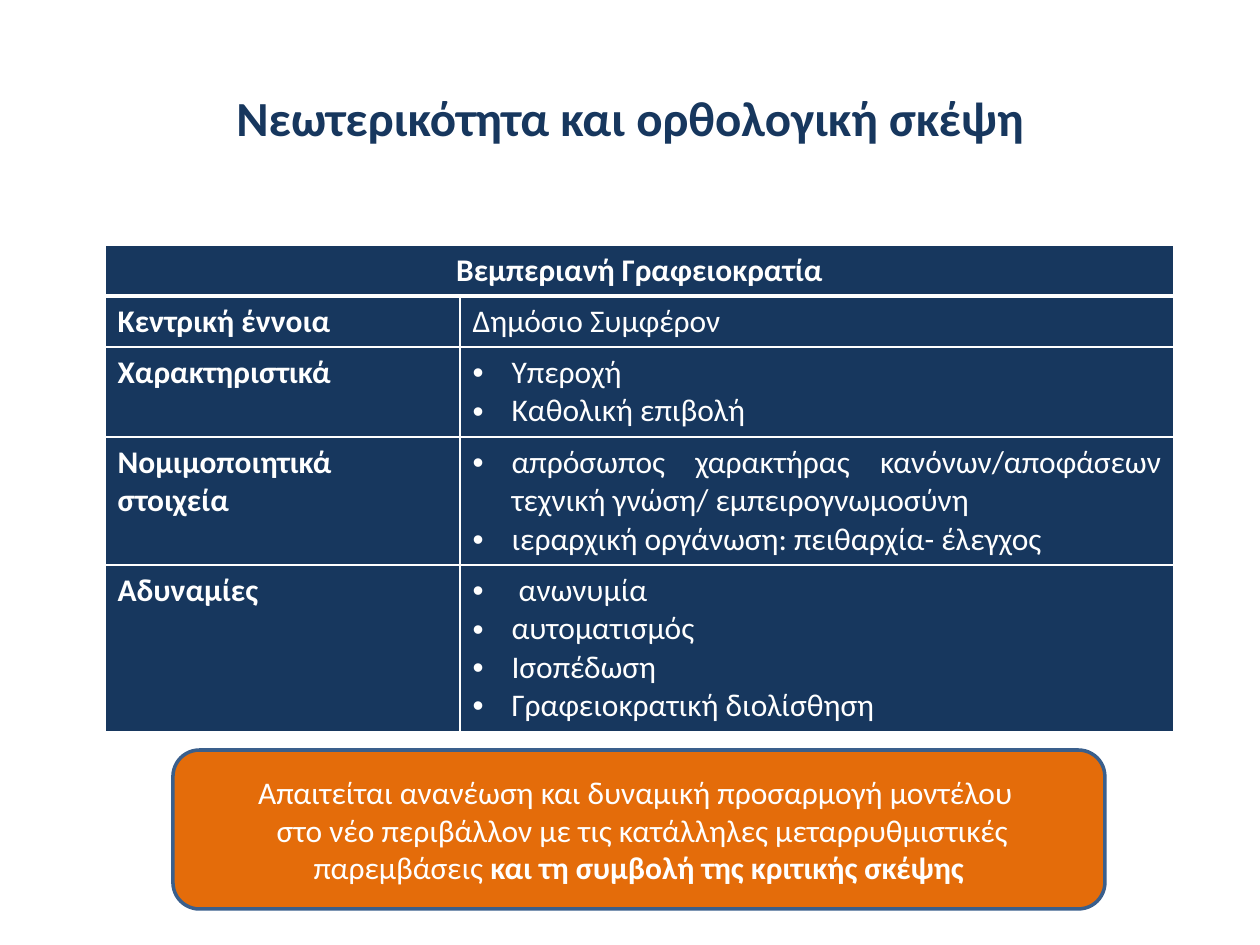
import pptx
import pptx.util
import pptx.dml.color
import pptx.enum.shapes
import pptx.enum.text
import pptx.oxml.ns
from lxml import etree

PX = 914400 // 126
NAVY, ORANGE, OUTLINE, WHITE = "17375E", "E46C0A", "3A5F8C", "FFFFFF"
ALIGN = pptx.enum.text.PP_ALIGN
MIDDLE = pptx.enum.text.MSO_ANCHOR.MIDDLE

TITLE = "Νεωτερικότητα και ορθολογική σκέψη"
HEADER = "Βεμπεριανή Γραφειοκρατία"
ROWS = [
    ("Κεντρική έννοια", ["Δημόσιο Συμφέρον"], False, ALIGN.LEFT),
    ("Χαρακτηριστικά", ["Υπεροχή", "Καθολική επιβολή"], True, ALIGN.LEFT),
    ("Νομιμοποιητικά στοιχεία", [
        "απρόσωπος χαρακτήρας κανόνων/αποφάσεων τεχνική γνώση/ εμπειρογνωμοσύνη",
        "ιεραρχική οργάνωση: πειθαρχία- έλεγχος",
    ], True, ALIGN.JUSTIFY),
    ("Αδυναμίες", [
        " ανωνυμία", "αυτοματισμός", "Ισοπέδωση", "Γραφειοκρατική διολίσθηση",
    ], True, ALIGN.JUSTIFY),
]
CONCLUSION = [
    [("Απαιτείται ανανέωση και δυναμική προσαρμογή μοντέλου ", False)],
    [(" στο νέο περιβάλλον με τις κατάλληλες μεταρρυθμιστικές παρεμβάσεις ", False),
     ("και τη συμβολή της κριτικής σκέψης", True)],
]
TITLE_BOX = (63, 38, 1134, 157)
TABLE_BOX = (105, 245, 1069, 486)
CONCLUSION_BOX = (173, 750, 932, 159)
COLUMNS = [355, 714]
HEIGHTS = [51, 51, 90, 128, 166]


def px(*values):
    return [v * PX for v in values]


def rgb(color):
    return pptx.dml.color.RGBColor.from_string(color)


def fill(obj, color):
    obj.fill.solid()
    obj.fill.fore_color.rgb = rgb(color)


def write(tf, paragraphs, size=18, color=WHITE, align=ALIGN.LEFT, bullet=False):
    for i, runs in enumerate(paragraphs):
        p = tf.paragraphs[0] if i == 0 else tf.add_paragraph()
        p.alignment = align
        if bullet:
            add_bullet(p)
        for text, bold in runs:
            r = p.add_run()
            r.text = text
            r.font.name = "Calibri"
            r.font.size = pptx.util.Pt(size)
            r.font.bold = bold
            r.font.color.rgb = rgb(color)


def add_bullet(p):
    pPr = p._p.get_or_add_pPr()
    indent = 39 * PX
    pPr.set("marL", str(indent))
    pPr.set("indent", str(-indent))
    qn = pptx.oxml.ns.qn
    etree.SubElement(pPr, qn("a:buFont"), typeface="Arial")
    etree.SubElement(pPr, qn("a:buChar"), char="•")


def set_borders(cell, row):
    qn = pptx.oxml.ns.qn
    tcPr = cell._tc.get_or_add_tcPr()
    widths = {"L": 1, "R": 1, "T": 3 if row == 1 else 1, "B": 3 if row == 0 else 1}
    for side, width in widths.items():
        ln = etree.SubElement(tcPr, qn("a:ln" + side), w=str(pptx.util.Pt(width)))
        solid = etree.SubElement(ln, qn("a:solidFill"))
        etree.SubElement(solid, qn("a:srgbClr"), val=WHITE)


def add_title(s):
    sp = s.shapes.title
    sp.left, sp.top, sp.width, sp.height = px(*TITLE_BOX)
    sp.text_frame.vertical_anchor = MIDDLE
    write(sp.text_frame, [[(TITLE, True)]], size=28, color=NAVY, align=ALIGN.CENTER)


def add_bureaucracy_table(s):
    table = s.shapes.add_table(len(HEIGHTS), len(COLUMNS), *px(*TABLE_BOX)).table
    for column, width in zip(table.columns, px(*COLUMNS)):
        column.width = width
    for i, (row, height) in enumerate(zip(table.rows, px(*HEIGHTS))):
        row.height = height
        for cell in row.cells:
            set_borders(cell, i)
            fill(cell, NAVY)
    table.cell(0, 0).merge(table.cell(0, 1))
    write(table.cell(0, 0).text_frame, [[(HEADER, True)]], align=ALIGN.CENTER)
    for i, (label, items, bullet, align) in enumerate(ROWS, 1):
        write(table.cell(i, 0).text_frame, [[(label, True)]])
        write(table.cell(i, 1).text_frame, [[(item, False)] for item in items],
              align=align, bullet=bullet)


def add_conclusion(s):
    shape_type = pptx.enum.shapes.MSO_SHAPE.ROUNDED_RECTANGLE
    sp = s.shapes.add_shape(shape_type, *px(*CONCLUSION_BOX))
    sp.shadow.inherit = False
    fill(sp, ORANGE)
    sp.line.color.rgb = rgb(OUTLINE)
    sp.line.width = pptx.util.Pt(2)
    sp.text_frame.word_wrap = True
    sp.text_frame.vertical_anchor = MIDDLE
    write(sp.text_frame, CONCLUSION, align=ALIGN.CENTER)


def main():
    prs = pptx.Presentation()
    prs.slide_width = pptx.util.Inches(10)
    prs.slide_height = pptx.util.Inches(7.5)
    s = prs.slides.add_slide(prs.slide_layouts[5])
    add_title(s)
    add_bureaucracy_table(s)
    add_conclusion(s)
    prs.save("out.pptx")


if __name__ == "__main__":
    main()
